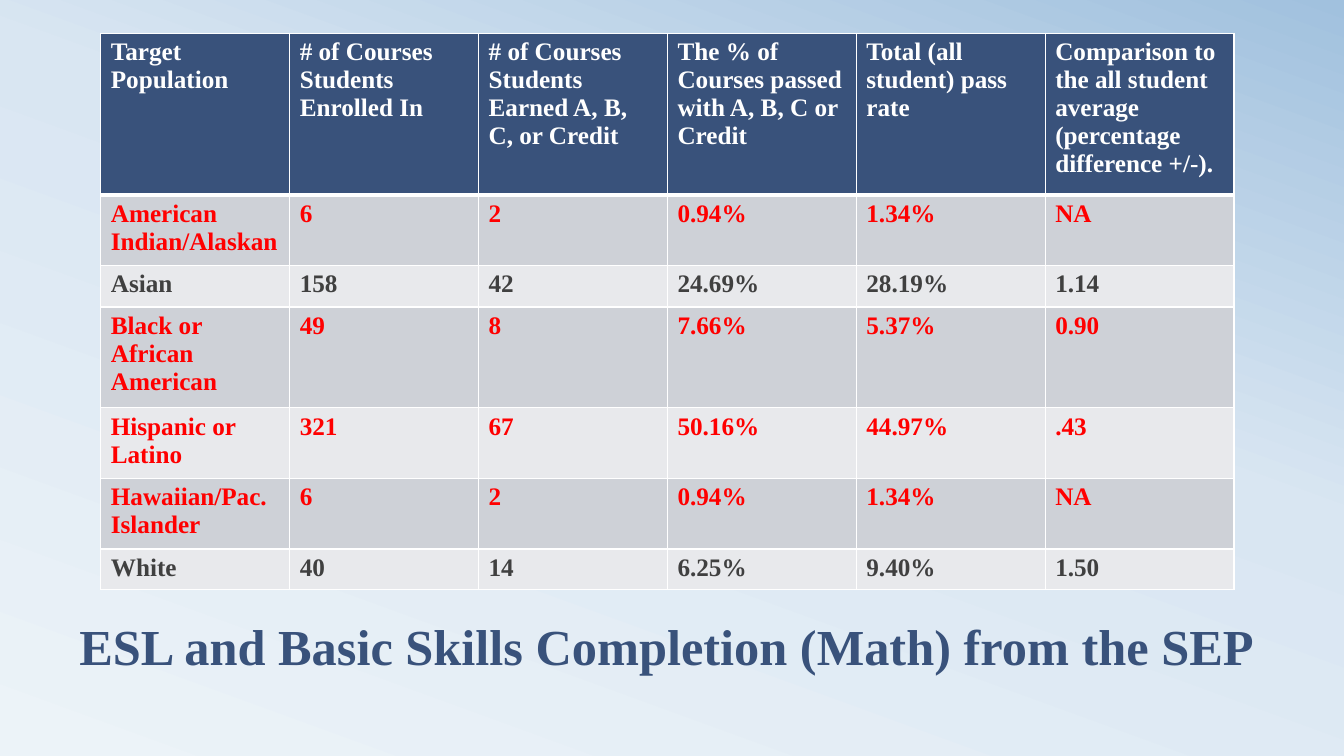
from copy import deepcopy
from dataclasses import dataclass

from lxml import etree
from pptx import Presentation
from pptx import util as u
from pptx.dml import color
from pptx.enum import text
from pptx.oxml import ns

FONT = "Times New Roman"
NAVY, WHITE, RED, GRAY = "39527B", "FFFFFF", "FF0000", "404040"
BANDS = ("CED1D7", "E8E9EC")
BACKGROUND = ((0, "ECF3F8"), (0.58, "D9E6F2"), (1, "A1C1DE"))
COLUMN_WIDTH = 4.76


@dataclass
class Row:
    height: float
    ink: str
    cells: tuple[str, ...]


ROWS = (
    Row(3.98, WHITE, (
        "Target Population",
        "# of Courses Students Enrolled In",
        "# of Courses Students Earned A, B, C, or Credit",
        "The % of Courses passed with A, B, C or Credit",
        "Total (all student) pass rate",
        "Comparison to the all student average (percentage difference +/-).",
    )),
    Row(1.66, RED, ("American Indian/Alaskan", "6", "2", "0.94%", "1.34%", "NA")),
    Row(1.05, GRAY, ("Asian", "158", "42", "24.69%", "28.19%", "1.14")),
    Row(2.36, RED, ("Black or African American", "49", "8", "7.66%", "5.37%", "0.90")),
    Row(1.66, RED, ("Hispanic or Latino", "321", "67", "50.16%", "44.97%", ".43")),
    Row(1.66, RED, ("Hawaiian/Pac.\nIslander", "6", "2", "0.94%", "1.34%", "NA")),
    Row(0.96, GRAY, ("White", "40", "14", "6.25%", "9.40%", "1.50")),
)


def rgb(value: str) -> color.RGBColor:
    return color.RGBColor.from_string(value)


def write(frame, content: str, *, size: float, ink: str,
          align=None, spacing: float | None = None) -> None:
    """Fill a text frame with bold text, one paragraph per line."""
    for index, line in enumerate(content.split("\n")):
        para = frame.add_paragraph() if index else frame.paragraphs[0]
        para.alignment = align
        para.line_spacing = spacing
        span = para.add_run()
        span.text = line
        span.font.name = FONT
        span.font.size = u.Pt(size)
        span.font.bold = True
        span.font.color.rgb = rgb(ink)


def set_borders(cell, top: float, bottom: float) -> None:
    """Draw white cell edges; top and bottom widths are in points."""
    properties = cell._tc.get_or_add_tcPr()
    widths = {"lnL": 1, "lnR": 1, "lnT": top, "lnB": bottom}
    for index, (edge, width) in enumerate(widths.items()):
        line = etree.Element(ns.qn(f"a:{edge}"), w=str(u.Pt(width)))
        fill = etree.SubElement(line, ns.qn("a:solidFill"))
        etree.SubElement(fill, ns.qn("a:srgbClr"), val=WHITE)
        properties.insert(index, line)


def paint_background(page) -> None:
    fill = page.background.fill
    fill.gradient()
    fill.gradient_angle = 70
    stop_list = next(page.element.iter(ns.qn("a:gsLst")))
    stop_list.append(deepcopy(stop_list[-1]))
    for stop, (position, value) in zip(fill.gradient_stops, BACKGROUND):
        stop.position = position
        stop.color.rgb = rgb(value)


def add_title(page) -> None:
    box = page.shapes.add_textbox(u.Cm(1.69), u.Cm(14.18), u.Cm(30.48), u.Cm(2.96))
    box.text_frame.word_wrap = True
    box.text_frame.vertical_anchor = text.MSO_ANCHOR.BOTTOM
    write(box.text_frame, "ESL and Basic Skills Completion (Math) from the SEP ",
          size=36, ink=NAVY, align=text.PP_ALIGN.CENTER, spacing=0.8)


def add_results(page) -> None:
    column_count = len(ROWS[0].cells)
    table = page.shapes.add_table(
        len(ROWS), column_count, u.Cm(2.54), u.Cm(0.84),
        u.Cm(COLUMN_WIDTH * column_count), u.Cm(sum(row.height for row in ROWS))).table
    for column in table.columns:
        column.width = u.Cm(COLUMN_WIDTH)
    for index, row in enumerate(ROWS):
        table.rows[index].height = u.Cm(row.height)
        for cell, content in zip(table.rows[index].cells, row.cells):
            cell.fill.solid()
            cell.fill.fore_color.rgb = rgb(BANDS[(index - 1) % 2] if index else NAVY)
            set_borders(cell, top=3 if index == 1 else 1, bottom=1 if index else 3)
            write(cell.text_frame, content, size=18, ink=row.ink)


def main() -> None:
    deck = Presentation()
    deck.slide_width, deck.slide_height = u.Cm(33.87), u.Cm(19.05)
    page = deck.slides.add_slide(deck.slide_layouts[6])
    paint_background(page)
    add_title(page)
    add_results(page)
    deck.save("out.pptx")


if __name__ == "__main__":
    main()
